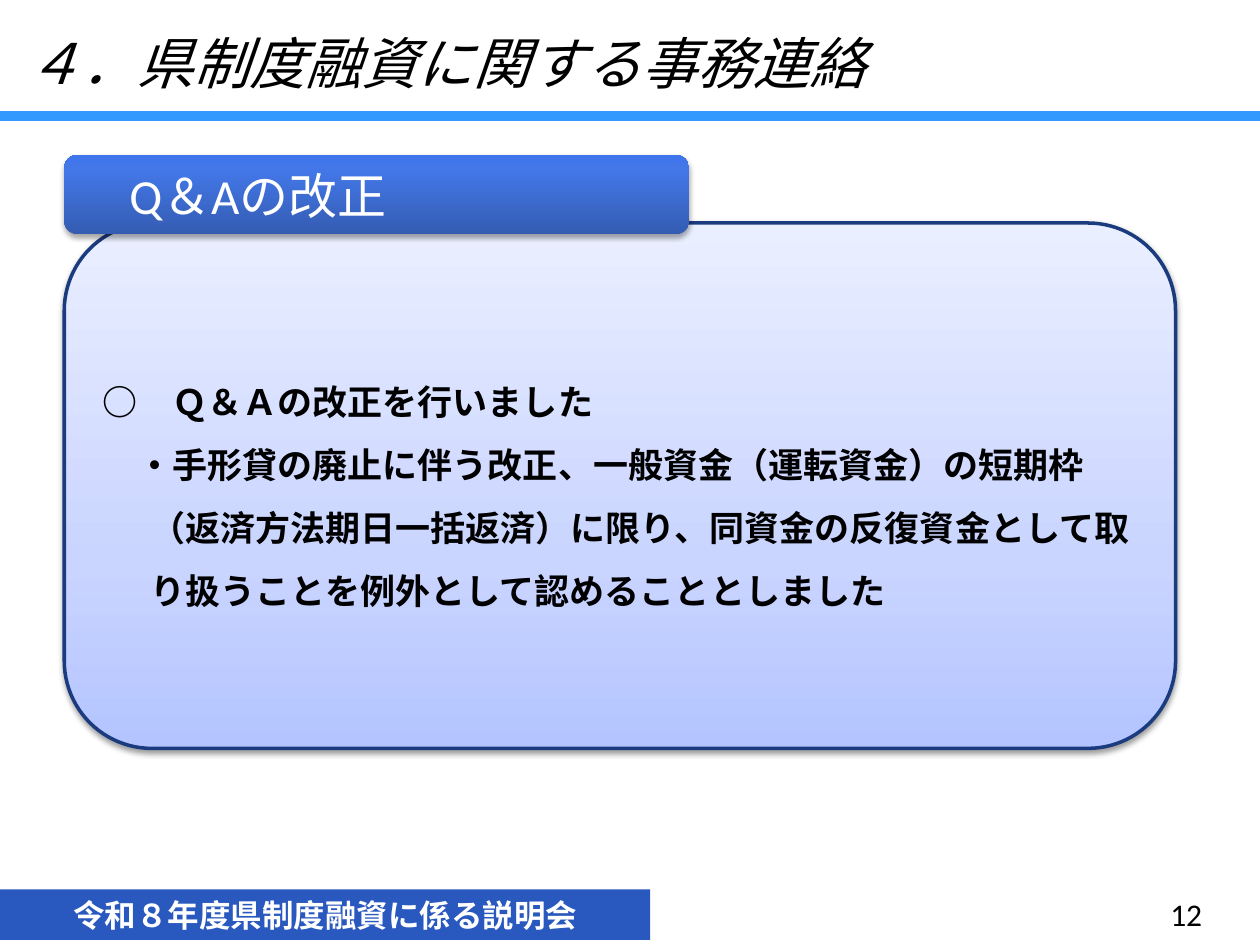
"""Build the slide announcing the revised Q&A on prefectural loan programmes."""
from copy import deepcopy

from pptx import Presentation
from pptx.dml.color import RGBColor
from pptx.enum.shapes import MSO_CONNECTOR, MSO_SHAPE
from pptx.enum.text import MSO_ANCHOR, PP_ALIGN
from pptx.oxml import parse_xml
from pptx.oxml.ns import nsdecls, qn
from pptx.util import Inches, Pt

COLORS = {"rule": "3399FF", "footer": "2958BE", "outline": "1B3B7F",
          "black": "000000", "white": "FFFFFF"}
PANEL_STOPS = [(0, "B3C4FF"), (0.35, "C9D4FF"), (1, "EAEFFF")]
BANNER_STOPS = [(0, "345CB2"), (0.8, "4377E7"), (1, "4076EB")]
JAPANESE = "Noto Sans CJK JP"


def style(span, size, color, face=JAPANESE, bold=False, italic=False):
    font = span.font
    font.size, font.bold, font.italic, font.name = Pt(size), bold, italic, face
    font.color.rgb = RGBColor.from_string(COLORS[color])
    east_asian = parse_xml(f'<a:ea {nsdecls("a")} typeface="{JAPANESE}"/>')
    span._r.rPr.find(qn("a:latin")).addnext(east_asian)


def add_glossy_box(left, top, width, height, stops, opacity, distance):
    box = page.shapes.add_shape(MSO_SHAPE.ROUNDED_RECTANGLE, Inches(left),
                                Inches(top), Inches(width), Inches(height))
    box.fill.gradient()
    box.fill.gradient_angle = 90
    stop_list = box._element.spPr.find(qn("a:gradFill")).find(qn("a:gsLst"))
    stop_list.append(deepcopy(stop_list[0]))
    for stop, (position, color) in zip(box.fill.gradient_stops, stops):
        stop.position = position
        stop.color.rgb = RGBColor.from_string(color)
    box.line.fill.background()
    box.shadow.inherit = False
    box._element.spPr.find(qn("a:effectLst")).append(parse_xml(
        f'<a:outerShdw {nsdecls("a")} blurRad="{Pt(3.1)}" dist="{Pt(distance)}" '
        'dir="5400000" rotWithShape="0"><a:srgbClr val="000000">'
        f'<a:alpha val="{opacity * 1000}"/></a:srgbClr></a:outerShdw>'))
    box.text_frame.word_wrap = True
    box.text_frame.vertical_anchor = MSO_ANCHOR.MIDDLE
    return box


deck = Presentation()
deck.slide_width, deck.slide_height = Inches(10), Inches(7.5)
page = deck.slides.add_slide(deck.slide_layouts[5])

rule = page.shapes.add_connector(MSO_CONNECTOR.STRAIGHT, 0, Inches(0.92),
                                 deck.slide_width, Inches(0.92))
rule.line.color.rgb = RGBColor.from_string(COLORS["rule"])
rule.line.width = Pt(6)
rule._element.spPr.append(parse_xml(f'<a:effectLst {nsdecls("a")}/>'))

footer = page.shapes.add_shape(MSO_SHAPE.RECTANGLE, 0, Inches(7.06),
                               Inches(5.16), Inches(0.4))
footer.shadow.inherit = False
footer.fill.solid()
footer.fill.fore_color.rgb = RGBColor.from_string(COLORS["footer"])
footer.line.fill.background()
footer.text_frame.text = "令和８年度県制度融資に係る説明会"
footer.text_frame.paragraphs[0].alignment = PP_ALIGN.CENTER
style(footer.text_frame.paragraphs[0].runs[0], 18, "white", bold=True)

panel = add_glossy_box(0.51, 1.77, 8.82, 4.17, PANEL_STOPS, 38, 1.6)
panel.line.color.rgb = RGBColor.from_string(COLORS["outline"])
panel.line.width = Pt(2)
panel.text_frame.text = (
    "○　Ｑ＆Ａの改正を行いました\n"
    "　・手形貸の廃止に伴う改正、一般資金（運転資金）の短期枠"
    "（返済方法期日一括返済）に限り、同資金の反復資金として"
    "取り扱うことを例外として認めることとしました")
for para in panel.text_frame.paragraphs:
    para.alignment = PP_ALIGN.LEFT
    para.line_spacing = 1.5
    para._p.pPr.set("marL", str(Inches(0.38)))
    para._p.pPr.set("indent", str(-Inches(0.38)))
    style(para.runs[0], 20, "black", bold=True)

title = page.shapes.title
title.left, title.top = 0, Inches(0.18)
title.width, title.height = Inches(8.15), Inches(1.18)
title.text_frame.vertical_anchor = MSO_ANCHOR.TOP
para = title.text_frame.paragraphs[0]
para.alignment = PP_ALIGN.LEFT
for text, face in [(" ４．", JAPANESE), ("県制度融資に関する事務連絡", "Arial")]:
    span = para.add_run()
    span.text = text
    style(span, 32, "black", face, italic=True)

number = page.shapes.add_textbox(Inches(7.31), Inches(7.05),
                                 Inches(2.33), Inches(0.4))
number.text_frame.word_wrap = True
number.text_frame.vertical_anchor = MSO_ANCHOR.MIDDLE
number.text_frame.text = "12"
number.text_frame.paragraphs[0].alignment = PP_ALIGN.RIGHT
style(number.text_frame.paragraphs[0].runs[0], 18, "black", "Calibri")

banner = add_glossy_box(0.51, 1.23, 4.96, 0.63, BANNER_STOPS, 35, 1.8)
banner.text_frame.text = "　Q＆Aの改正"
banner.text_frame.paragraphs[0].alignment = PP_ALIGN.LEFT
style(banner.text_frame.paragraphs[0].runs[0], 28, "white", "Calibri")

deck.save("out.pptx")
